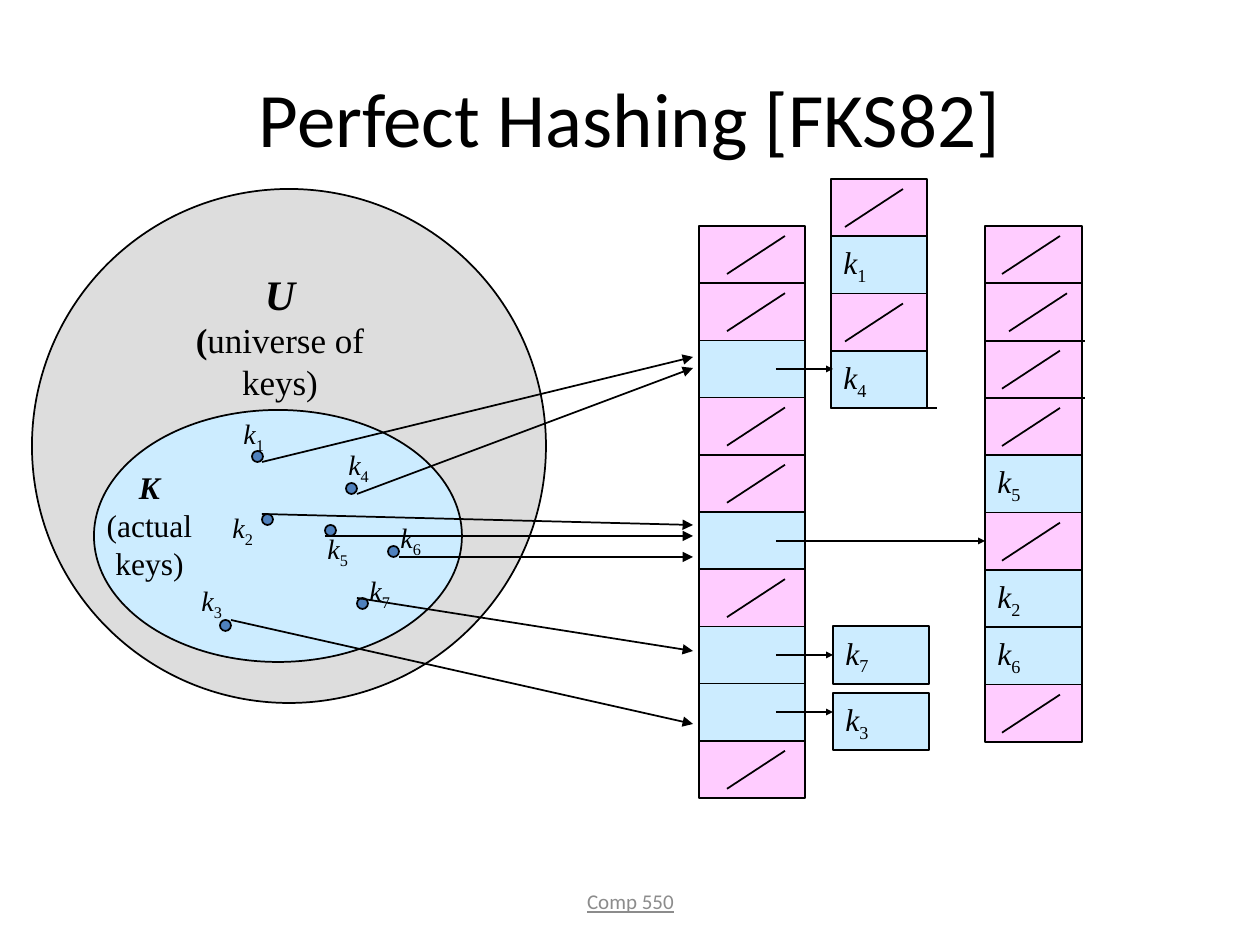
from lxml import etree
from pptx import Presentation
from pptx import util as u
from pptx.dml.color import RGBColor
from pptx.enum import shapes, text
from pptx.oxml import ns

COLORS = {"black": "000000", "universe": "DDDDDD", "blue": "CCECFF",
          "pink": "FFCCFF", "dot": "4F81BD", "footer": "8C8C8C"}
SERIF, SANS = "Times New Roman", "Calibri"
SCALE = u.Inches(1) / 126

TITLE = ("Perfect Hashing [FKS82]", (63, 38, 1134, 158))
FOOTER = ("Comp 550", (431, 876, 399, 50))
SETS = [("universe", (32, 189, 514, 514)), ("blue", (94, 410, 368, 252))]
SET_LABELS = [
    ((151, 262, 258, 145), True, [[("U", 24, True, True)],
                                  [("(", 20, True, False), ("universe of keys)", 20, False, False)]]),
    ((94, 462, 111, 126), False, [[("K", 18, True, True)],
                                  [("(actual", 18, False, False)],
                                  [("keys)", 18, False, False)]]),
]
# key: dot corner, label corner, arrow start, arrow end height
KEYS = {
    "1": ((252, 451), (231, 410), (262, 462), 357),
    "4": ((346, 483), (336, 441), (357, 494), 368),
    "2": ((262, 514), (220, 504), (262, 514), 525),
    "5": ((325, 525), (315, 525), (325, 536), 536),
    "6": ((388, 546), (388, 514), (399, 557), 557),
    "7": ((357, 598), (357, 567), (357, 598), 651),
    "3": ((220, 620), (189, 577), (231, 620), 724),
}
DOT, ARROW_END = 11, 693
EMPTY, LINK = None, ""
COLUMNS = {
    "primary": dict(box=(699, 226, 106, 572), slash=28, shifts={},
                    dividers=[(row, 106) for row in range(1, 10)],
                    slots=[EMPTY, EMPTY, LINK, EMPTY, EMPTY, LINK, EMPTY, LINK, LINK, EMPTY]),
    "bucket 7": dict(box=(833, 626, 96, 58), slash=0, shifts={}, dividers=[], slots=["7"]),
    "bucket 3": dict(box=(833, 693, 96, 57), slash=0, shifts={}, dividers=[], slots=["3"]),
    "bucket 1-4": dict(box=(831, 179, 96, 229), slash=14, shifts={},
                       dividers=[(4, 106)], slots=[EMPTY, "1", EMPTY, "4"]),
    "bucket 2-5-6": dict(box=(985, 226, 97, 516), slash=17, shifts={1: 7},
                         dividers=[(1, 97), (2, 100), (3, 100)],
                         slots=[EMPTY, EMPTY, EMPTY, EMPTY, "5", EMPTY, "2", "6", EMPTY]),
}
LINKS = [(369, 833, None), (541, 985, None), (655, 833, "7"), (712, 833, None)]
LINK_START = 776


def px(*values):
    return [u.Emu(round(value * SCALE)) for value in values]


def color(name):
    return RGBColor.from_string(COLORS[name])


def add_run(paragraph, content, size, bold=False, italic=False, font=SERIF, fill="black"):
    run = paragraph.add_run()
    run.text = content
    run.font.name, run.font.size = font, u.Pt(size)
    run.font.bold, run.font.italic = bold, italic
    run.font.color.rgb = color(fill)
    return run


def add_key(paragraph, key, size):
    paragraph.alignment = text.PP_ALIGN.LEFT
    add_run(paragraph, "k", size, italic=True)
    subscript = add_run(paragraph, key, size)
    subscript._r.get_or_add_rPr().set("baseline", "-25000")


def add_shape(slide, kind, box, fill):
    shape = slide.shapes.add_shape(kind, *px(*box))
    shape.shadow.inherit = False
    shape.fill.solid()
    shape.fill.fore_color.rgb = color(fill)
    shape.line.color.rgb = color("black")
    shape.line.width = u.Pt(1)
    return shape


def add_line(slide, start, end, head=None):
    line = slide.shapes.add_connector(shapes.MSO_CONNECTOR.STRAIGHT, *px(*start, *end))
    line.line.color.rgb = color("black")
    line.line.width = u.Pt(1)
    if head:
        etree.SubElement(line.line._get_or_add_ln(), ns.qn("a:tailEnd"),
                         type="triangle", w=head, len=head)
    etree.SubElement(line._element.spPr, ns.qn("a:effectLst"))
    return line


def add_text(slide, box, wrap=False):
    frame = slide.shapes.add_textbox(*px(*box)).text_frame
    frame.word_wrap = wrap
    return frame


def add_column(slide, box, slots, dividers, slash, shifts):
    left, top, width, height = box
    pitch = height / len(slots)
    cells = {}
    if len(slots) > 1:
        add_shape(slide, shapes.MSO_SHAPE.RECTANGLE, box, "pink")
    for row, length in dividers:
        y = top + row * pitch
        add_line(slide, (left, y), (left + length, y))
    for row, slot in enumerate(slots):
        y = top + row * pitch
        if slot is EMPTY:
            x = left + slash + shifts.get(row, 0)
            add_line(slide, (x + 58, y + 10), (x, y + 48))
            continue
        cell = add_shape(slide, shapes.MSO_SHAPE.RECTANGLE, (left, y, width, pitch), "blue")
        if slot:
            cell.text_frame.word_wrap = False
            cell.text_frame.vertical_anchor = text.MSO_ANCHOR.MIDDLE
            add_key(cell.text_frame.paragraphs[0], slot, 18)
            cells[slot] = cell
    return cells


def main():
    presentation = Presentation()
    presentation.slide_width, presentation.slide_height = px(1260, 945)
    slide = presentation.slides.add_slide(presentation.slide_layouts[5])

    content, box = TITLE
    title = slide.shapes.title
    title.left, title.top, title.width, title.height = px(*box)
    title.text_frame.vertical_anchor = text.MSO_ANCHOR.MIDDLE
    title.text_frame.paragraphs[0].alignment = text.PP_ALIGN.CENTER
    add_run(title.text_frame.paragraphs[0], content, 44, font=SANS)

    for fill, box in SETS:
        add_shape(slide, shapes.MSO_SHAPE.OVAL, box, fill)
    for box, wrap, lines in SET_LABELS:
        frame = add_text(slide, box, wrap)
        for index, runs in enumerate(lines):
            paragraph = frame.add_paragraph() if index else frame.paragraphs[0]
            paragraph.alignment = text.PP_ALIGN.CENTER
            for run in runs:
                add_run(paragraph, *run)

    for key, (dot, label, start, end_y) in KEYS.items():
        add_shape(slide, shapes.MSO_SHAPE.OVAL, (*dot, DOT, DOT), "dot")
        add_key(add_text(slide, (*label, 48, 47)).paragraphs[0], key, 16)
        add_line(slide, start, (ARROW_END, end_y), "med")

    cells = {}
    for column in COLUMNS.values():
        cells.update(add_column(slide, **column))
    for y, end_x, key in LINKS:
        link = add_line(slide, (LINK_START, y), (end_x, y), "sm")
        if key:
            link.end_connect(cells[key], 1)

    content, box = FOOTER
    frame = add_text(slide, box, True)
    frame.vertical_anchor = text.MSO_ANCHOR.MIDDLE
    frame.paragraphs[0].alignment = text.PP_ALIGN.CENTER
    add_run(frame.paragraphs[0], content, 12, font=SANS, fill="footer").font.underline = True

    presentation.save("out.pptx")


if __name__ == "__main__":
    main()
